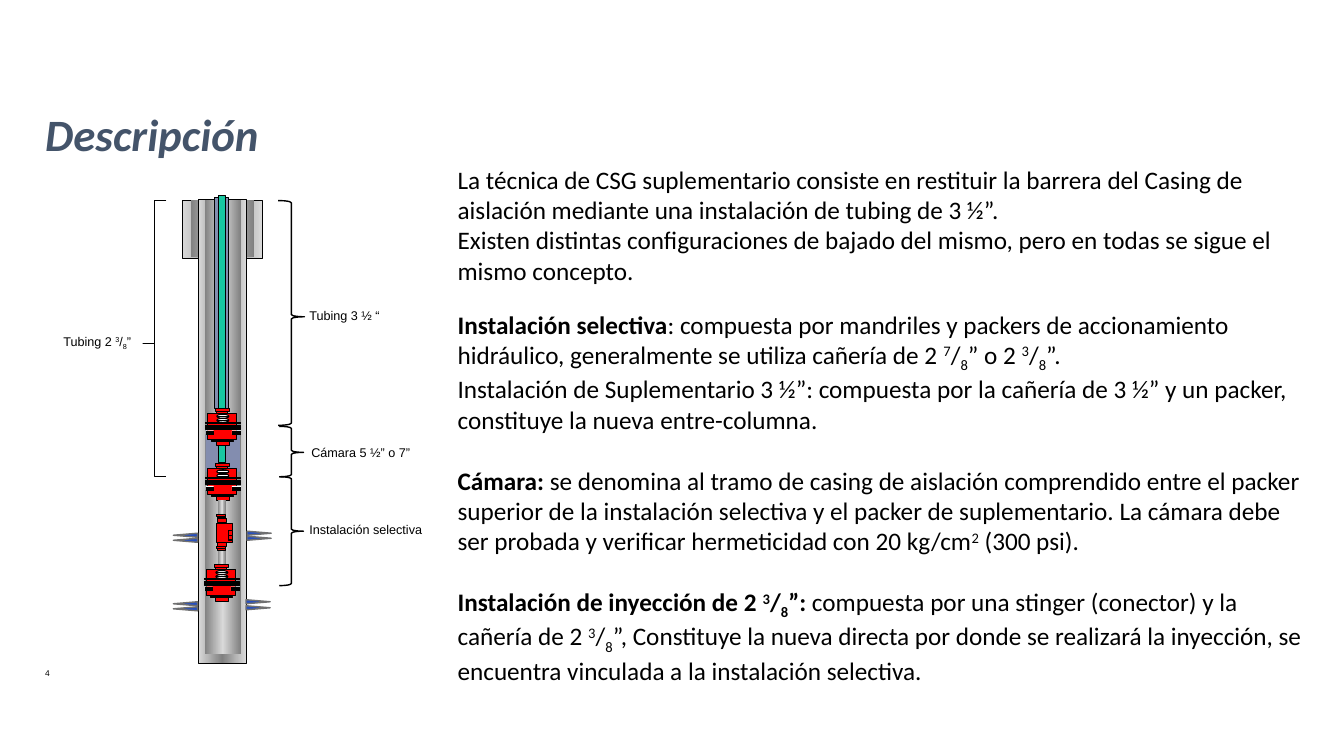
from copy import deepcopy
from dataclasses import dataclass

from pptx import Presentation
from pptx.dml.color import RGBColor as RGB
from pptx.enum.dml import MSO_PATTERN as PAT
from pptx.enum.shapes import MSO_SHAPE as SHP
from pptx.enum.text import MSO_ANCHOR as ANC
from pptx.oxml.ns import qn
from pptx.util import Inches, Pt


@dataclass(frozen=True)
class Theme:
    black: str = "000000"
    white: str = "FFFFFF"
    red: str = "FF0000"
    light: str = "D9D9D9"
    dark: str = "808080"
    blue: str = "274FBD"
    edge: str = "707070"
    fluid: str = "838DAF"
    teal: str = "18C7A1"
    title: str = "44546A"
    sans: str = "Arial"
    main: str = "Calibri"
    big: int = 32
    body: int = 18
    label: int = 9
    tiny: int = 6


T = Theme()
OUTER = (T.light, T.dark, T.light)
INNER = (T.dark, T.light, T.dark)


@dataclass(frozen=True)
class Box:
    x: float
    y: float
    w: float
    h: float

    def inner(self, x, y, w, h):
        return Box(self.x + x, self.y + y, w, h)

    def size(self):
        return [Inches(v) for v in (self.x, self.y, self.w, self.h)]


# Fill is a colour, a pattern, three gradient colours or None
def draw(shapes, box, fill, line=0, kind=SHP.RECTANGLE, ink=T.black):
    shape = shapes.add_shape(kind, *box.size())
    shape.shadow.inherit = False
    paint = shape.fill
    if fill is None:
        paint.background()
    elif isinstance(fill, tuple):
        paint.gradient()
        paint.gradient_angle = 0
        stops = shape._element.spPr.find(qn("a:gradFill")).find(qn("a:gsLst"))
        stops.append(deepcopy(stops[0]))
        for i, stop in enumerate(paint.gradient_stops):
            stop.position = i / 2
            stop.color.rgb = RGB.from_string(fill[i])
    elif isinstance(fill, str):
        paint.solid()
        paint.fore_color.rgb = RGB.from_string(fill)
    else:
        paint.patterned()
        paint.pattern = fill
        paint.fore_color.rgb = RGB.from_string(T.black)
        paint.back_color.rgb = RGB.from_string(T.white)
    if line:
        shape.line.width = Pt(line)
        shape.line.color.rgb = RGB.from_string(ink)
    else:
        shape.line.fill.background()
    return shape


# Marks on a run: b bold, i italic, ^ raised, _ lowered
def write(shapes, box, paras, size, face, ink=T.black, gaps=()):
    frame = shapes.add_textbox(*box.size()).text_frame
    frame.word_wrap = True
    for i, runs in enumerate(paras):
        para = frame.add_paragraph() if i else frame.paragraphs[0]
        if i and gaps:
            para.space_before = Pt(gaps[i])
        for text, marks in runs:
            run = para.add_run()
            run.text = text
            font = run.font
            font.size, font.name = Pt(size), face
            font.color.rgb = RGB.from_string(ink)
            font.bold, font.italic = "b" in marks, "i" in marks
            for mark, shift in (("^", "30000"), ("_", "-25000")):
                if mark in marks:
                    run._r.get_or_add_rPr().set("baseline", shift)
    return frame


def frac(top, low, marks=""):
    return [(top, marks + "^"), ("/", marks), (low, marks + "_")]


def packer(shapes, box):
    def red(*at):
        draw(shapes, box.inner(*at), T.red, 0.75)

    def spring(y):
        draw(shapes, box.inner(0.11, y, 0.12, 0.04), PAT.LIGHT_HORIZONTAL, 0.75, SHP.OVAL)

    red(0.02, 0.05, 0.29, 0.26)
    spring(0.1)
    red(0.11, 0.03, 0.11, 0.02)
    red(0.1, 0, 0.14, 0.03)
    red(0.11, 0.31, 0.13, 0.06)
    red(0.06, 0.32, 0.22, 0.01)
    spring(0.06)
    # Rubber seals and slips
    for y, h in ((0.14, 0.01), (0.17, 0.02), (0.19, 0.02)):
        draw(shapes, box.inner(0, y, 0.35, h), T.black, 0.75)
    for x, w in ((0, 0.08), (0.26, 0.09)):
        draw(shapes, box.inner(x, 0.22, w, 0.04), PAT.DARK_HORIZONTAL)


def mandrel(shapes, box):
    for at in ((0.01, 0.01, 0.08, 0.03), (0, 0, 0.09, 0.02),
               (0, 0.09, 0.16, 0.19), (0.01, 0.04, 0.09, 0.04),
               (0.01, 0.28, 0.09, 0.04), (0.12, 0.16, 0.04, 0.1),
               (0.12, 0.21, 0.04, 0.04), (0.01, 0.33, 0.08, 0.03),
               (0, 0.32, 0.09, 0.02)):
        draw(shapes, box.inner(*at), T.red, 0.75)


def well(shapes, box):
    # Collar and casing
    draw(shapes, box.inner(0, 0.05, 0.79, 0.57), OUTER, 0.5)
    draw(shapes, box.inner(0.08, 0.04, 0.63, 0.57), INNER)
    draw(shapes, box.inner(0.16, 0.04, 0.47, 4.6), OUTER, 0.5)
    draw(shapes, box.inner(0.22, 0.04, 0.36, 4.51), INNER)
    # Perforations
    for x, turn, tops in ((0.74, 90, (3.23, 3.28)), (0.73, 90, (3.91, 3.97)),
                          (0.01, 270, (3.3, 3.25)), (0.01, 270, (3.98, 3.93))):
        pair = shapes.add_group_shape().shapes
        for y in tops:
            tip = draw(pair, box.inner(x, y, 0.04, 0.24), T.blue, 1,
                       SHP.ISOSCELES_TRIANGLE, T.edge)
            tip.rotation = turn
    # Chamber and tubing strings
    draw(shapes, box.inner(0.23, 2.31, 0.34, 0.43), T.fluid)
    draw(shapes, box.inner(0.32, 0.02, 0.14, 2.09), T.fluid, 1)
    draw(shapes, box.inner(0.36, 0, 0.07, 2.65), T.teal, 0.75)
    # Selective string
    tools = shapes.add_group_shape().shapes
    packer(tools, box.inner(0.23, 2.66, 0.35, 0.37))
    draw(tools, box.inner(0.35, 3.02, 0.08, 0.64), INNER)
    packer(tools, box.inner(0.22, 3.66, 0.35, 0.37))
    mandrel(tools, box.inner(0.34, 3.16, 0.16, 0.36))
    # Upper packer
    packer(shapes.add_group_shape().shapes, box.inner(0.23, 2.11, 0.35, 0.37))


def labels(shapes, box):
    for at, bend, mid, flip in (
            ((2.24, 2.79, 0.24, 1.08), 0.083, 0.5, False),
            ((2.24, 2.29, 0.24, 0.5), 0.083, 0.517, False),
            ((2.23, 0.05, 0.26, 2.23), 0.083, 0.517, False),
            ((0.89, 0.05, 0.23, 2.74), 0, 0.517, True)):
        brace = draw(shapes, box.inner(*at), None, 1, SHP.RIGHT_BRACE)
        brace.adjustments[0], brace.adjustments[1] = bend, mid
        if flip:
            brace._element.spPr.find(qn("a:xfrm")).set("flipH", "1")
    for x, y, w, runs in (
            (2.46, 2.42, 1.34, [("Cámara 5 ½” o 7”", "")]),
            (2.44, 3.19, 1.34, [("Instalación selectiva", "")]),
            (2.44, 1.07, 1.34, [("Tubing 3 ½ “", "")]),
            (0, 1.32, 1.05, [("Tubing 2 ", ""), *frac("3", "8"), ("”", "")])):
        write(shapes, box.inner(x, y, w, 0.25), [runs], T.label, T.sans)


def body(shapes, box):
    paras = [
        [("La técnica de CSG suplementario consiste en restituir la barrera del Casing de aislación mediante una instalación de tubing de 3 ½”.", "")],
        [("Existen distintas configuraciones de bajado del mismo, pero en todas se sigue el mismo concepto.", "")],
        [("Instalación selectiva", "b"), (": compuesta por mandriles y packers de accionamiento hidráulico, generalmente se utiliza cañería de 2 ", ""),
         *frac("7", "8"), ("” o 2 ", ""), *frac("3", "8"), ("”.", "")],
        [("Instalación de Suplementario 3 ½”: compuesta por la cañería de 3 ½” y un packer, constituye la nueva entre-columna.", "")],
        [("Cámara: ", "b"), ("se denomina al tramo de casing de aislación comprendido entre el packer superior de la instalación selectiva y el packer de suplementario. La cámara debe ser probada y verificar hermeticidad con 20 kg/cm", ""),
         ("2", "^"), (" (300 psi).", "")],
        [("Instalación de inyección de 2 ", "b"), *frac("3", "8", "b"), ("”: ", "b"),
         ("compuesta por una stinger (conector) y la cañería de 2 ", ""), *frac("3", "8"),
         ("”, Constituye la nueva directa por donde se realizará la inyección, se encuentra vinculada a la instalación selectiva.", "")],
    ]
    write(shapes, box, paras, T.body, T.main, gaps=(0, 0, 17, 0, 22, 22))


def title(shapes, box):
    frame = write(shapes, box, [[("Descripción", "bi")]], T.big, T.main, T.title)
    frame.vertical_anchor = ANC.BOTTOM
    frame.paragraphs[0].line_spacing = 0.9


def main():
    deck = Presentation()
    deck.slide_width, deck.slide_height = Inches(13.33), Inches(7.5)
    shapes = deck.slides.add_slide(deck.slide_layouts[6]).shapes
    write(shapes, Box(0.35, 6.58, 0.35, 0.12), [[("4", "")]], T.tiny, T.sans)
    well(shapes, Box(1.81, 1.94, 0.79, 4.64))
    labels(shapes, Box(0.53, 1.94, 3.8, 4.64))
    body(shapes, Box(4.44, 1.58, 8.61, 5.42))
    title(shapes, Box(0.35, 1.15, 11.5, 0.5))
    deck.save("out.pptx")


if __name__ == "__main__":
    main()
